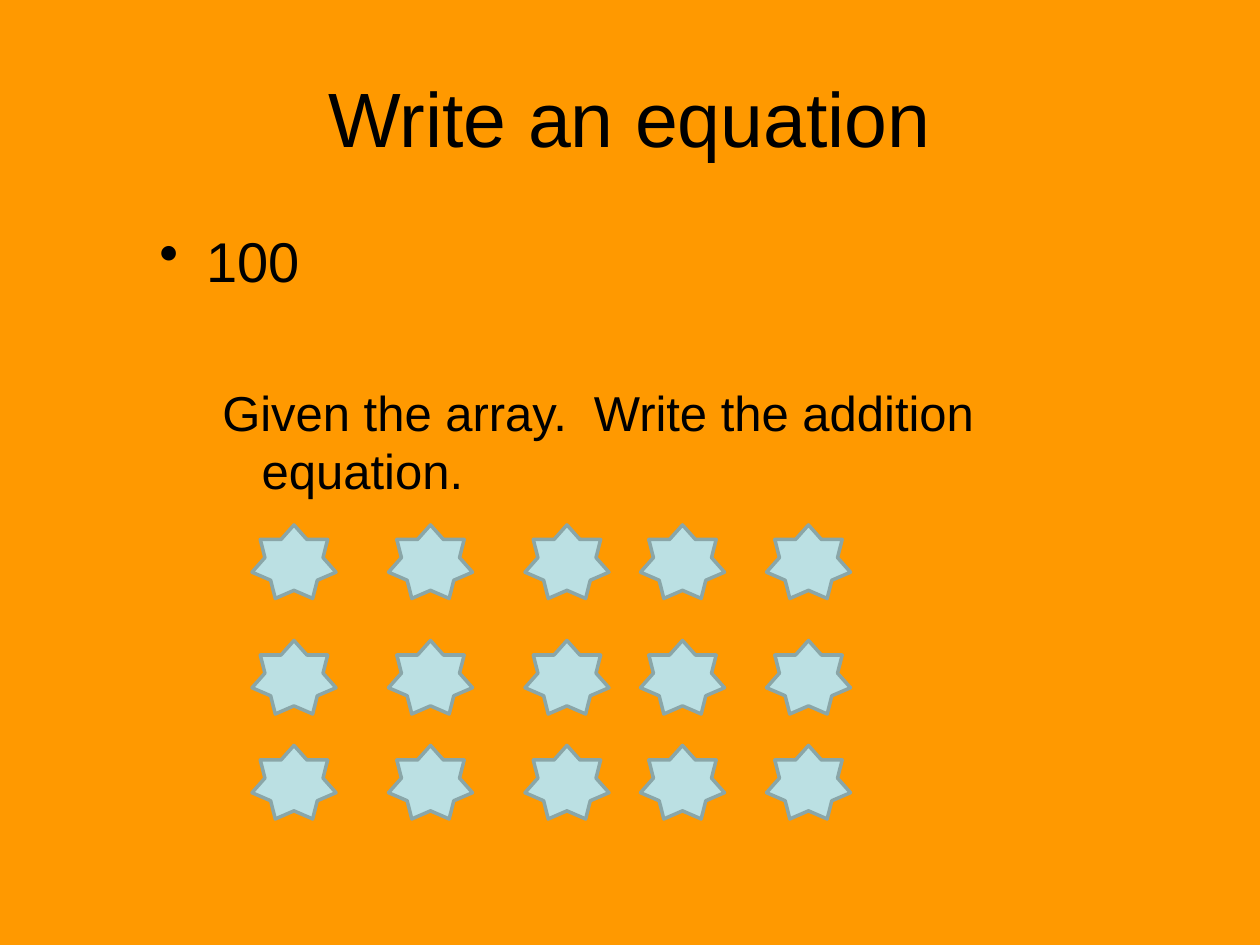
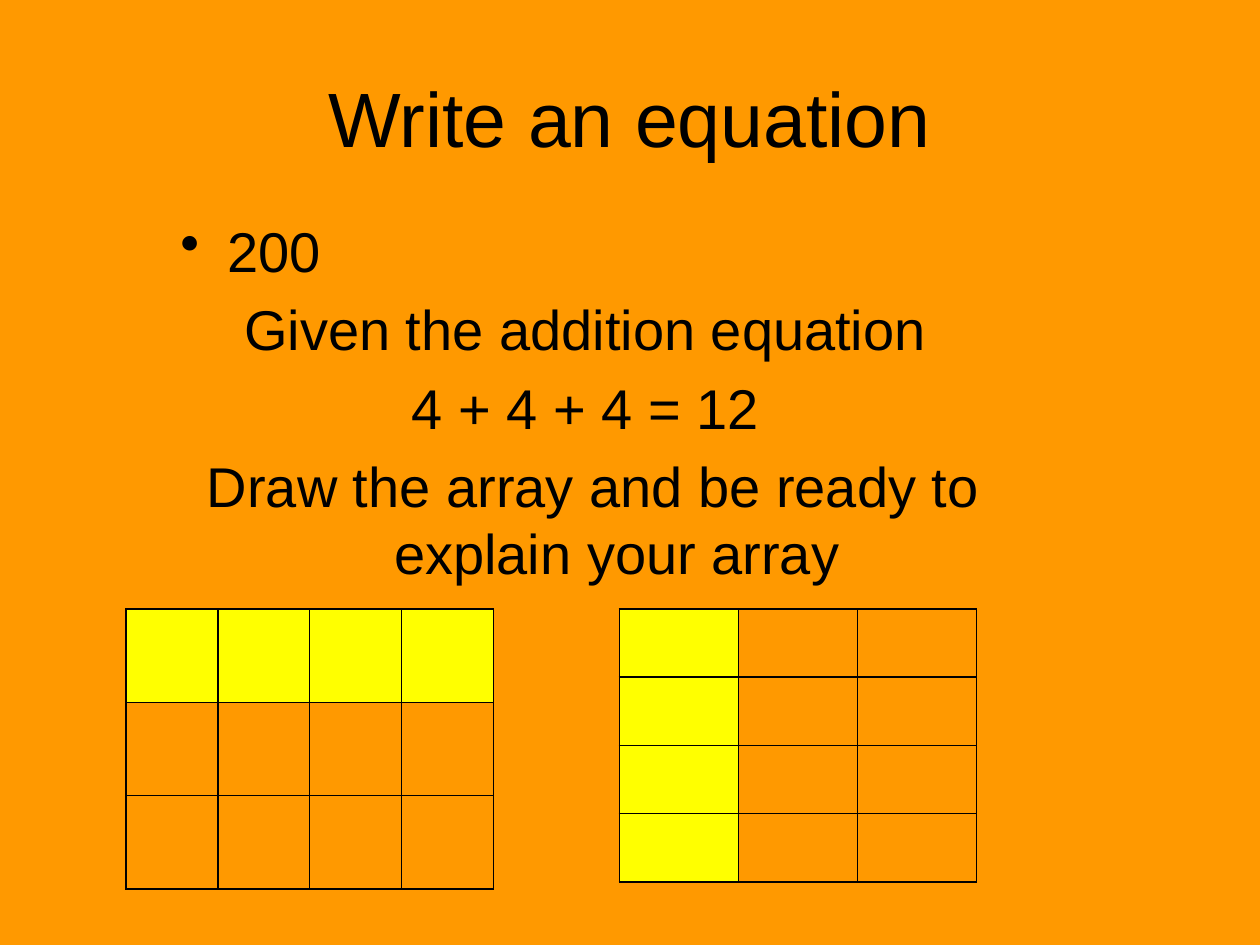
from pptx import Presentation
from pptx.dml.color import RGBColor
from pptx.enum.shapes import MSO_SHAPE
from pptx.enum.text import MSO_ANCHOR, PP_ALIGN
from pptx.oxml import parse_xml
from pptx.oxml.ns import nsdecls
from pptx.util import Pt

ORANGE, BLACK, YELLOW = "FF9900", "000000", "FFFF00"
STAR_FILL, STAR_LINE = "BBE0E3", "8AA6A8"
FONT = "Arial"
TITLE_BOX = (36, 21.6, 648, 90)
LINE_FACTOR, GAP_FACTOR = 1.2, 0.2
BULLET_INDENT = {"marL": 27, "indent": -27}
SECOND_LEVEL_INDENT = {"marL": 58.5, "indent": -22.5}
STAR_SIZE = (48, 42)


def color(hex_string):
    return RGBColor.from_string(hex_string)


def apply_format(target, values):
    for name, value in values.items():
        setattr(target, name, value)


def write(paragraph, text, size, **paragraph_format):
    apply_format(paragraph, paragraph_format)
    run = paragraph.add_run()
    run.text = text
    apply_format(run.font, {"name": FONT, "size": Pt(size)})
    run.font.color.rgb = color(BLACK)


def add_text_frame(slide, box, anchor):
    frame = slide.shapes.add_textbox(*map(Pt, box)).text_frame
    apply_format(frame, {"word_wrap": True, "vertical_anchor": anchor})
    return frame


def add_titled_slide(presentation, title):
    slide = presentation.slides.add_slide(presentation.slide_layouts[6])
    slide.background.fill.solid()
    slide.background.fill.fore_color.rgb = color(ORANGE)
    frame = add_text_frame(slide, TITLE_BOX, MSO_ANCHOR.MIDDLE)
    write(frame.paragraphs[0], title, 44, alignment=PP_ALIGN.CENTER)
    return slide


def add_body(slide, box, points, lines):
    """Write the bulleted points, then lines of (text, size, extra gap, indent, alignment)."""
    frame = add_text_frame(slide, box, MSO_ANCHOR.TOP)
    rows = [(points, 32, 0, BULLET_INDENT, PP_ALIGN.LEFT), *lines]
    for index, (text, size, extra_gap, indent, alignment) in enumerate(rows):
        paragraph = frame.add_paragraph() if index else frame.paragraphs[0]
        gap = size * GAP_FACTOR + extra_gap if index else 0
        write(paragraph, text, size, alignment=alignment,
              line_spacing=Pt(size * LINE_FACTOR), space_before=Pt(gap))
        properties = paragraph._p.get_or_add_pPr()
        for name, length in indent.items():
            properties.set(name, str(Pt(length)))
        if index == 0:
            properties.append(parse_xml(f'<a:buChar {nsdecls("a")} char="•"/>'))


def add_star_array(slide, left, top, column_offsets, row_offsets):
    for x in column_offsets:
        for y in row_offsets:
            star = slide.shapes.add_shape(
                MSO_SHAPE.STAR_7_POINT, Pt(left + x), Pt(top + y), *map(Pt, STAR_SIZE))
            star.shadow.inherit = False
            star.fill.solid()
            star.fill.fore_color.rgb = color(STAR_FILL)
            star.line.color.rgb = color(STAR_LINE)
            star.line.width = Pt(2)


def add_borders(cell):
    properties = cell._tc.get_or_add_tcPr()
    for position, side in enumerate(("lnL", "lnR", "lnT", "lnB")):
        properties.insert(position, parse_xml(
            f'<a:{side} {nsdecls("a")} w="{Pt(1)}"><a:solidFill>'
            f'<a:srgbClr val="{BLACK}"/></a:solidFill></a:{side}>'))


def add_array_table(slide, box, row_count, column_count, is_highlighted):
    """Draw an even grid; is_highlighted(row, column) picks the yellow cells."""
    left, top, width, height = box
    table = slide.shapes.add_table(row_count, column_count, *map(Pt, box)).table
    apply_format(table, {"first_row": False, "horz_banding": False})
    for column in table.columns:
        column.width = Pt(width / column_count)
    for row in table.rows:
        row.height = Pt(height / row_count)
    for row in range(row_count):
        for column in range(column_count):
            cell = table.cell(row, column)
            if is_highlighted(row, column):
                cell.fill.solid()
                cell.fill.fore_color.rgb = color(YELLOW)
            else:
                cell.fill.background()
            add_borders(cell)


def build_star_slide(presentation):
    slide = add_titled_slide(presentation, "Write an equation")
    add_body(slide, (84, 126, 540, 356), "100", [
        ("Given the array.  Write the addition equation.", 28, 44.8,
         SECOND_LEVEL_INDENT, PP_ALIGN.LEFT)])
    add_star_array(slide, 144, 300, (0, 78, 156, 222, 294), (0, 66, 126))


def build_table_slide(presentation):
    slide = add_titled_slide(presentation, "Write an equation")
    task = ("Given the addition equation ", "4 + 4 + 4 = 12 ",
            "Draw the array and be ready to explain your array")
    add_body(slide, (96, 120, 486, 356), "200",
             [(text, 32, 0, BULLET_INDENT, PP_ALIGN.CENTER) for text in task])
    add_array_table(slide, (72, 348, 210, 160), 3, 4, lambda row, column: row == 0)
    add_array_table(slide, (354, 348, 204, 156), 4, 3, lambda row, column: column == 0)


def main():
    presentation = Presentation()
    apply_format(presentation, {"slide_width": Pt(720), "slide_height": Pt(540)})
    build_star_slide(presentation)
    build_table_slide(presentation)
    presentation.save("out.pptx")


if __name__ == "__main__":
    main()
